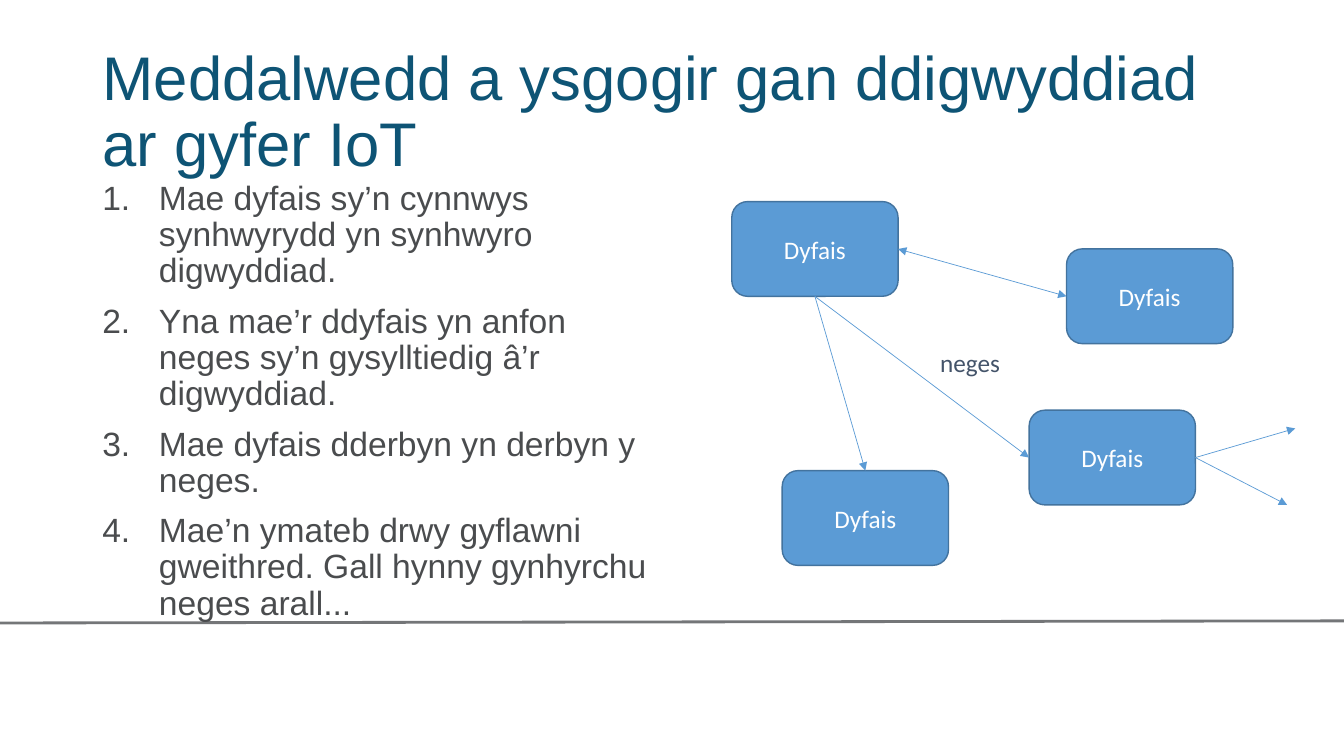
from lxml import etree
from pptx import Presentation
from pptx import util as u
from pptx.dml.color import RGBColor
from pptx.enum import shapes, text
from pptx.oxml.ns import qn

COLOURS = {
    "title": "0E5475",
    "body": "4A4C4E",
    "rule": "747678",
    "device": "5B9BD5",
    "outline": "43739E",
    "label": "44546A",
    "white": "FFFFFF",
}
TOP, LEFT, BOTTOM, RIGHT = range(4)
DEVICE_SIZE = (118.8, 67.7)

STEPS = [
    "Mae dyfais sy’n cynnwys synhwyrydd yn synhwyro digwyddiad.",
    "Yna mae’r ddyfais yn anfon neges sy’n gysylltiedig â’r digwyddiad.",
    "Mae dyfais dderbyn yn derbyn y neges.",
    "Mae’n ymateb drwy gyflawni gweithred. Gall hynny gynhyrchu neges arall...",
]
DEVICES = {
    "sensor": (522.7, 144),
    "relay": (735.1, 293),
    "receiver": (558.7, 336.2),
    "partner": (761.8, 177.8),
}
MESSAGES = [
    ("sensor", RIGHT, "partner", LEFT, True),
    ("sensor", BOTTOM, "relay", LEFT, False),
    ("sensor", BOTTOM, "receiver", TOP, False),
]
ONWARD_ENDS = [(919.4, 360.7), (925.2, 306)]


def colour(name):
    return RGBColor.from_string(COLOURS[name])


def apply(target, values):
    for name, value in values.items():
        setattr(target, name, value)


class SlideBuilder:
    heading_font = "Arial"
    diagram_font = "Calibri"

    def __init__(self, deck):
        self.page = deck.slides.add_slide(deck.slide_layouts[5])

    def place(self, shape, left, top, width, height):
        apply(shape, {"left": u.Pt(left), "top": u.Pt(top),
                      "width": u.Pt(width), "height": u.Pt(height)})

    def add_words(self, para, words, font, size, ink, **layout):
        apply(para, layout)
        span = para.add_run()
        span.text = words
        apply(span.font, {"name": font, "size": u.Pt(size)})
        span.font.color.rgb = colour(ink)

    def frame(self, shape, anchor):
        apply(shape.text_frame, {"word_wrap": True, "vertical_anchor": anchor,
                                 "auto_size": text.MSO_AUTO_SIZE.NONE})
        return shape.text_frame

    def title(self, words, *bounds):
        box = self.page.shapes.title
        self.place(box, *bounds)
        para = self.frame(box, text.MSO_ANCHOR.MIDDLE).paragraphs[0]
        self.add_words(para, words, self.heading_font, 44, "title",
                       alignment=text.PP_ALIGN.LEFT, line_spacing=0.9)

    def numbered_list(self, items, *bounds):
        box = self.page.shapes.add_textbox(*map(u.Pt, bounds))
        frame = self.frame(box, text.MSO_ANCHOR.TOP)
        for index, words in enumerate(items):
            para = frame.add_paragraph() if index else frame.paragraphs[0]
            properties = para._p.get_or_add_pPr()
            properties.set("marL", str(u.Pt(40.5)))
            properties.set("indent", str(u.Pt(-40.5)))
            etree.SubElement(properties, qn("a:buFont"), typeface="+mj-lt")
            etree.SubElement(properties, qn("a:buAutoNum"), type="arabicPeriod")
            self.add_words(para, words, self.heading_font, 24, "body",
                           line_spacing=0.9,
                           space_before=u.Pt(10 if index else 0))

    def device(self, words, left, top):
        box = self.page.shapes.add_shape(
            shapes.MSO_SHAPE.ROUNDED_RECTANGLE,
            *map(u.Pt, (left, top, *DEVICE_SIZE)))
        box.shadow.inherit = False
        box.fill.solid()
        box.fill.fore_color.rgb = colour("device")
        box.line.color.rgb = colour("outline")
        box.line.width = u.Pt(1)
        para = self.frame(box, text.MSO_ANCHOR.MIDDLE).paragraphs[0]
        self.add_words(para, words, self.diagram_font, 18, "white",
                       alignment=text.PP_ALIGN.CENTER)
        return box

    def label(self, words, *bounds):
        box = self.page.shapes.add_textbox(*map(u.Pt, bounds))
        para = self.frame(box, text.MSO_ANCHOR.TOP).paragraphs[0]
        self.add_words(para, words, self.diagram_font, 18, "label",
                       alignment=text.PP_ALIGN.CENTER)

    def line(self, start, end, ink, width):
        line = self.page.shapes.add_connector(
            shapes.MSO_CONNECTOR.STRAIGHT, *map(u.Pt, (*start, *end)))
        line.line.color.rgb = colour(ink)
        line.line.width = u.Pt(width)
        etree.SubElement(line._element.spPr, qn("a:effectLst"))
        return line

    def arrow(self, source, source_side, target=None, target_side=None,
              end=(0, 0), both_ways=False):
        arrow = self.line((0, 0), end, "device", 0.5)
        arrow.begin_connect(source, source_side)
        if target is not None:
            arrow.end_connect(target, target_side)
        outline = arrow._element.spPr.find(qn("a:ln"))
        for tag in ("a:headEnd", "a:tailEnd") if both_ways else ("a:tailEnd",):
            etree.SubElement(outline, qn(tag), type="triangle")


def main():
    deck = Presentation()
    apply(deck, {"slide_width": u.Pt(960), "slide_height": u.Pt(540)})
    builder = SlideBuilder(deck)

    builder.line((0, 445), (960, 443.5), "rule", 2)
    builder.title("Meddalwedd a ysgogir gan ddigwyddiad ar gyfer IoT",
                  66, 28.8, 828, 104.4)
    builder.numbered_list(STEPS, 66, 126, 408.2, 353.5)

    devices = {name: builder.device("Dyfais", *corner)
               for name, corner in DEVICES.items()}
    for source, source_side, target, target_side, both_ways in MESSAGES:
        builder.arrow(devices[source], source_side, devices[target],
                      target_side, both_ways=both_ways)
    for end in ONWARD_ENDS:
        builder.arrow(devices["relay"], RIGHT, end=end)
    builder.label("neges", 650.9, 244.8, 84.2, 28.8)

    deck.save("out.pptx")


if __name__ == "__main__":
    main()
